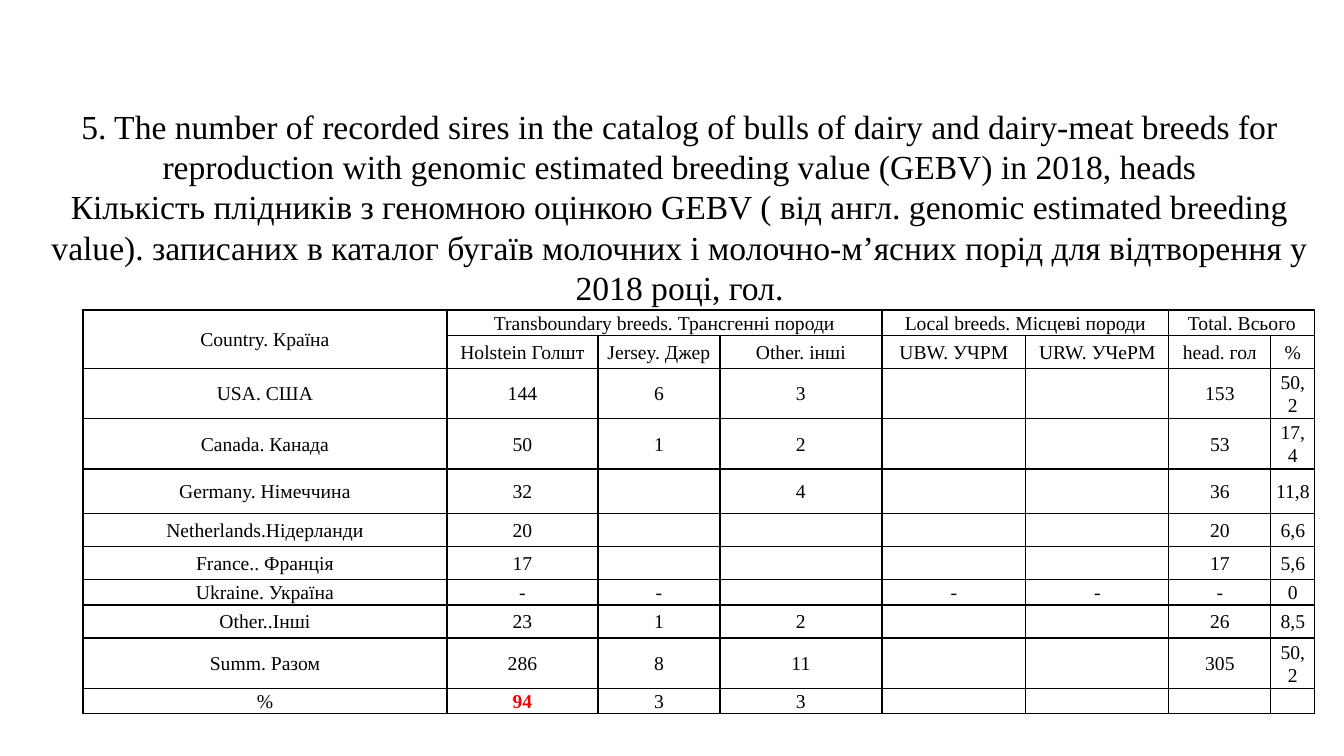
"""Slide with a table of recorded sires by country and breed."""
from lxml import etree
from pptx import Presentation
from pptx.dml.color import RGBColor
from pptx.enum.text import MSO_ANCHOR, MSO_AUTO_SIZE, PP_ALIGN
from pptx.oxml.ns import qn
from pptx.util import Emu, Pt

PX = 914400 / 100.8
FONT = "Times New Roman"
BLACK = RGBColor(0x00, 0x00, 0x00)
RED = RGBColor(0xFF, 0x00, 0x00)
CENTER = PP_ALIGN.CENTER
MIDDLE = MSO_ANCHOR.MIDDLE
GROW = MSO_AUTO_SIZE.SHAPE_TO_FIT_TEXT

TITLE = [
    "5. The number of recorded sires in the catalog of bulls of dairy and dairy-meat breeds "
    "for reproduction with genomic estimated breeding value (GEBV) in 2018, heads",
    "Кількість плідників з геномною оцінкою GEBV ( від англ. genomic estimated breeding value). "
    "записаних в каталог бугаїв молочних і молочно-м’ясних порід для відтворення у 2018 році, гол.",
]
COLUMNS = [364, 151, 122, 162, 144, 143, 102, 44]
ROWS = [22, 33, 45, 45, 45, 33, 33, 22, 33, 45, 11]
MERGES = [(0, 0, 1, 0), (0, 1, 0, 3), (0, 4, 0, 5), (0, 6, 0, 7)]
DATA = [
    ["Country. Країна", "Transboundary breeds. Трансгенні породи", "", "",
     "Local breeds. Місцеві породи", "", "Total. Всього", ""],
    ["", "Holstein Голшт", "Jersey. Джер", "Other. інші", "UBW. УЧРМ", "URW. УЧеРМ",
     "head. гол", "%"],
    ["USA. США", "144", "6", "3", "", "", "153", "50,2"],
    ["Canada. Канада", "50", "1", "2", "", "", "53", "17,4"],
    ["Germany. Німеччина", "32", "", "4", "", "", "36", "11,8"],
    ["Netherlands.Нідерланди", "20", "", "", "", "", "20", "6,6"],
    ["France.. Франція", "17", "", "", "", "", "17", "5,6"],
    ["Ukraine. Україна", "-", "-", "", "-", "-", "-", "0"],
    ["Other..Інші", "23", "1", "2", "", "", "26", "8,5"],
    ["Summ. Разом", "286", "8", "11", "", "", "305", "50,2"],
    ["%", "94", "3", "3", "", "", "", ""],
]


def px(n):
    return Emu(round(n * PX))


def add_run(p, text, size, color=BLACK, bold=False):
    r = p.add_run()
    r.text = text
    r.font.name = FONT
    r.font.size = Pt(size)
    r.font.bold = bold
    r.font.color.rgb = color


def set_title(slide, paragraphs, box):
    sp = slide.shapes.title
    sp.left, sp.top, sp.width, sp.height = map(px, box)
    tf = sp.text_frame
    tf.word_wrap = True
    tf.auto_size = GROW
    tf.vertical_anchor = MIDDLE
    for i, text in enumerate(paragraphs):
        p = tf.add_paragraph() if i else tf.paragraphs[0]
        p.alignment = CENTER
        add_run(p, text, 24)


def set_borders(cell):
    tc_pr = cell._tc.get_or_add_tcPr()
    for i, side in enumerate(("a:lnL", "a:lnR", "a:lnT", "a:lnB")):
        ln = etree.Element(qn(side), w=str(Pt(1)))
        fill = etree.SubElement(ln, qn("a:solidFill"))
        etree.SubElement(fill, qn("a:srgbClr"), val=str(BLACK))
        tc_pr.insert(i, ln)


def fill_cell(cell, text, color, bold):
    cell.fill.background()
    cell.vertical_anchor = MIDDLE
    cell.margin_left = cell.margin_right = px(5)
    cell.margin_top = cell.margin_bottom = 0
    p = cell.text_frame.paragraphs[0]
    p.alignment = CENTER
    p.line_spacing = 1.07
    if text:
        add_run(p, text, 14, color, bold)
    else:
        etree.SubElement(p._p, qn("a:endParaRPr"), sz="1400")
    set_borders(cell)


def add_sires_table(slide, box):
    frame = slide.shapes.add_table(len(ROWS), len(COLUMNS), *map(px, box))
    table = frame.table
    table.first_row = table.horz_banding = False
    for column, width in zip(table.columns, COLUMNS):
        column.width = px(width)
    for row, height in zip(table.rows, ROWS):
        row.height = px(height)
    for i, texts in enumerate(DATA):
        for j, text in enumerate(texts):
            marked = text == "94"
            fill_cell(table.cell(i, j), text, RED if marked else BLACK, marked)
    for top, left, bottom, right in MERGES:
        table.cell(top, left).merge(table.cell(bottom, right))


def main():
    prs = Presentation()
    prs.slide_width, prs.slide_height = px(1344), px(756)
    slide = prs.slides.add_slide(prs.slide_layouts[5])
    set_title(slide, TITLE, (40, 100, 1279, 213))
    add_sires_table(slide, (83, 310, 1232, 391))
    prs.save("out.pptx")


if __name__ == "__main__":
    main()
